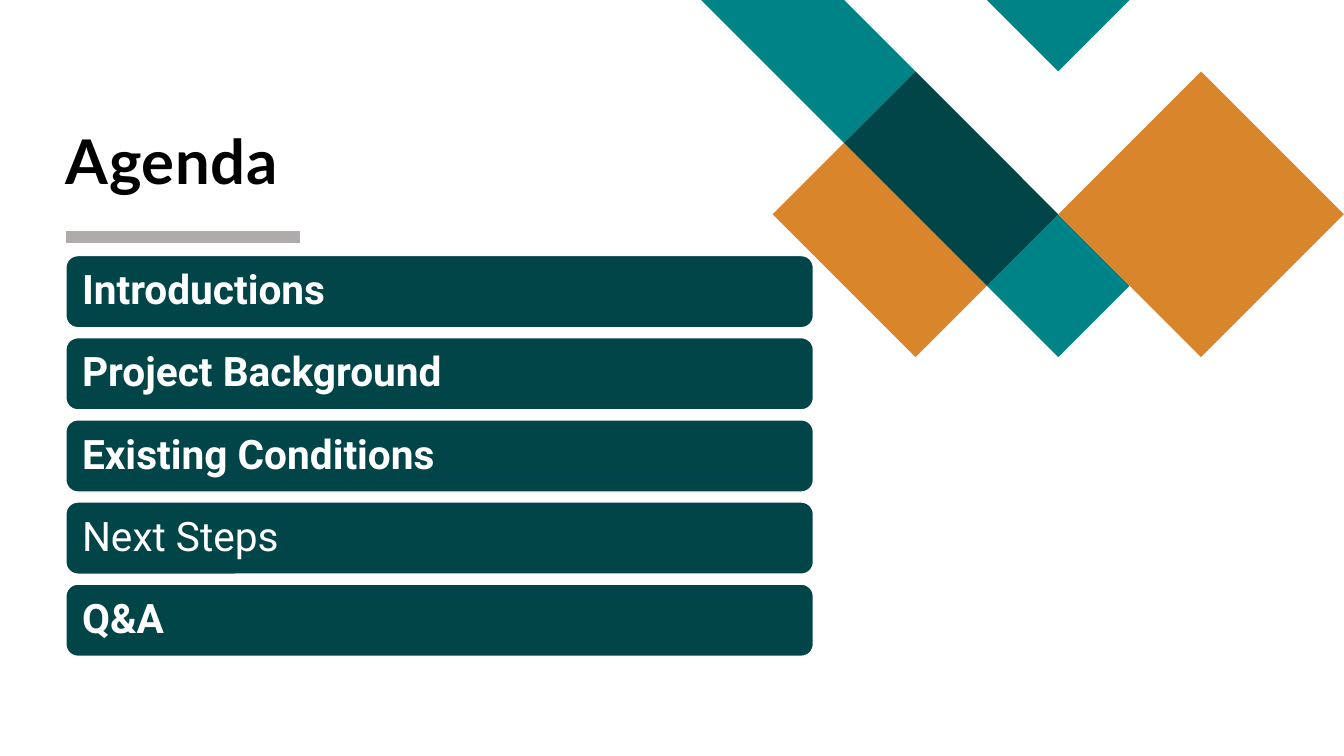
import pptx
import pptx.util
import pptx.dml.color
import pptx.enum.shapes
import pptx.enum.text
import lxml.etree

Cm, Pt = pptx.util.Cm, pptx.util.Pt
RGB = pptx.dml.color.RGBColor.from_string
SHAPE = pptx.enum.shapes.MSO_SHAPE
ALIGN = pptx.enum.text.PP_ALIGN
ANCHOR = pptx.enum.text.MSO_ANCHOR

theme = {
    "teal": RGB("008387"), "dark": RGB("014548"), "orange": RGB("D8852C"),
    "rule": RGB("AFABAB"), "black": RGB("000000"), "white": RGB("FFFFFF"),
    "title": Pt(44), "item": Pt(29),
}

deck = pptx.Presentation()
deck.slide_width, deck.slide_height = Cm(33.87), Cm(19.05)
slide = deck.slides.add_slide(deck.slide_layouts[6])
shapes = slide.shapes


def write(frame, text, font, size, color, bold, spacing, anchor, inset):
    frame.word_wrap = True
    frame.vertical_anchor = anchor
    frame.margin_left = frame.margin_right = inset
    frame.margin_top = frame.margin_bottom = inset
    line = frame.paragraphs[0]
    line.text = text
    line.alignment = ALIGN.LEFT
    line.line_spacing = spacing
    line.font.name, line.font.size = font, size
    line.font.bold = bold
    line.font.color.rgb = color
    return line


# Diamond pattern: contours as (column, row) points on a square grid
pattern = [
    ("teal", [[(3, 1), (2, 0), (0, 0), (2, 2)],
              [(6, 4), (5, 3), (4, 4), (5, 5)]]),
    ("orange", [[(2, 2), (1, 3), (3, 5), (4, 4)]]),
    ("teal", [[(6, 0), (4, 0), (5, 1)]]),
    ("dark", [[(3, 1), (2, 2), (4, 4), (5, 3)]]),
    ("orange", [[(9, 3), (7, 1), (5, 3), (7, 5)]]),
]
for color, loops in pattern:
    pen = shapes.build_freeform(*loops[0][0], scale=Cm(1.8))
    for i, loop in enumerate(loops):
        if i:
            pen.move_to(*loop[0])
        pen.add_line_segments(loop[1:], close=True)
    tile = pen.convert_to_shape(Cm(17.67), 0)
    tile.shadow.inherit = False
    tile.fill.solid()
    tile.fill.fore_color.rgb = theme[color]
    tile.line.fill.background()

# Title and rule
left, width = Cm(1.66), Cm(18.84)
box = shapes.add_textbox(left, Cm(0.53), width, Cm(4.42))
title = write(box.text_frame, "Agenda", "Lato", theme["title"], theme["black"],
              True, 0.8, ANCHOR.BOTTOM, 0)
title.runs[0].font._element.set("spc", "50")

rule = shapes.add_connector(pptx.enum.shapes.MSO_CONNECTOR.STRAIGHT,
                            left, Cm(5.97), Cm(7.56), Cm(5.97))
rule.line.color.rgb = theme["rule"]
rule.line.width = Pt(8)
lxml.etree.SubElement(rule._element.spPr, pptx.oxml.ns.qn("a:effectLst"))

# Agenda bars
items = [("Introductions", True), ("Project Background", True),
         ("Existing Conditions", True), ("Next Steps", False), ("Q&A", True)]
for i, (text, bold) in enumerate(items):
    bar = shapes.add_shape(SHAPE.ROUNDED_RECTANGLE, left, Cm(6.44 + 2.07 * i),
                           width, Cm(1.82))
    bar.shadow.inherit = False
    bar.fill.solid()
    bar.fill.fore_color.rgb = theme["dark"]
    bar.line.color.rgb = theme["white"]
    bar.line.width = Pt(1)
    write(bar.text_frame, text, "Roboto", theme["item"], theme["white"],
          bold, 0.9, ANCHOR.MIDDLE, Cm(0.32))

deck.save("out.pptx")
